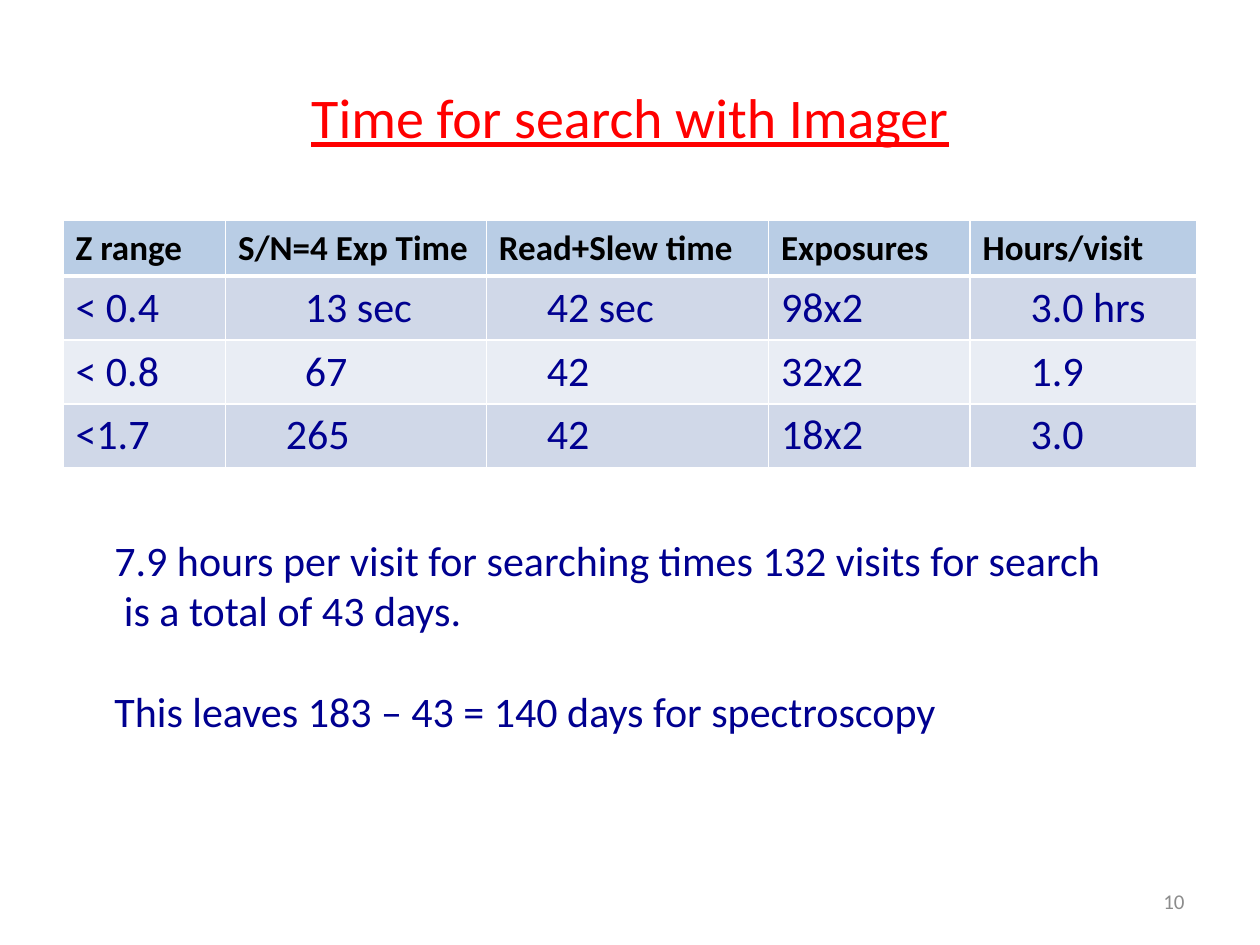
from lxml import etree
from pptx import Presentation
from pptx import util as u
from pptx.dml.color import RGBColor
from pptx.enum import text
from pptx.oxml.ns import qn

RED, NAVY, BLACK, GREY, WHITE = "FF0000", "000090", "000000", "8C8C8C", "FFFFFF"
HEADER_FILL, BAND_FILLS = "B9CDE5", ("D0D8E8", "E9EDF4")

COLUMN_WIDTHS = (1.29, 2.07, 2.24, 1.6, 1.8)
HEADER_HEIGHT, ROW_HEIGHT = 0.43, 0.5
CELL_MARGIN = 0.1
INDENTS = (0, 0.53, 0.38, 0, 0.38)
HEADINGS = ("Z range", "S/N=4 Exp Time", "Read+Slew time", "Exposures", "Hours/visit")
ROWS = (
    ("< 0.4", "13 sec", "42 sec", "98x2", "3.0 hrs"),
    ("< 0.8", "67", "42", "32x2", "1.9"),
    ("<1.7", "265", "42", "18x2", "3.0"),
)
THREE_DIGIT_INDENT = 0.38


def rgb(color):
    return RGBColor.from_string(color)


def write(p, content, size=24, color=NAVY, bold=False, underline=False,
          align=text.PP_ALIGN.LEFT, before=0):
    p.alignment = align
    p.space_before = u.Pt(before)
    r = p.add_run()
    r.text = content
    r.font.name = "Calibri"
    r.font.size = u.Pt(size)
    r.font.bold = bold
    r.font.underline = underline
    r.font.color.rgb = rgb(color)


def set_borders(cell, top=1, bottom=1):
    tcPr = cell._tc.get_or_add_tcPr()
    for tag, width in (("lnL", 1), ("lnR", 1), ("lnT", top), ("lnB", bottom)):
        ln = etree.SubElement(tcPr, qn(f"a:{tag}"), w=str(u.Pt(width)))
        fill = etree.SubElement(ln, qn("a:solidFill"))
        etree.SubElement(fill, qn("a:srgbClr"), val=WHITE)


def format_cell(cell, content, fill, indent=0, top=1, bottom=1, **style):
    set_borders(cell, top, bottom)
    cell.fill.solid()
    cell.fill.fore_color.rgb = rgb(fill)
    cell.margin_left = u.Inches(CELL_MARGIN + indent)
    write(cell.text_frame.paragraphs[0], content, **style)


def place_title(s, left, top, width, height):
    sp = s.shapes.title
    sp.left, sp.top = u.Inches(left), u.Inches(top)
    sp.width, sp.height = u.Inches(width), u.Inches(height)
    tf = sp.text_frame
    tf.vertical_anchor = text.MSO_ANCHOR.MIDDLE
    write(tf.paragraphs[0], "Time for search with Imager", size=32, color=RED,
          underline=True, align=text.PP_ALIGN.CENTER)


def place_times_table(s, left, top, width, height):
    table = s.shapes.add_table(
        len(ROWS) + 1, len(HEADINGS),
        u.Inches(left), u.Inches(top), u.Inches(width), u.Inches(height)).table
    for column, column_width in zip(table.columns, COLUMN_WIDTHS):
        column.width = u.Inches(column_width)
    for i, row in enumerate(table.rows):
        row.height = u.Inches(ROW_HEIGHT if i else HEADER_HEIGHT)
    for c, heading in enumerate(HEADINGS):
        format_cell(table.cell(0, c), heading, HEADER_FILL, bottom=3,
                    size=20, color=BLACK, bold=True)
    for i, values in enumerate(ROWS):
        for c, (value, indent) in enumerate(zip(values, INDENTS)):
            if value.isdigit() and len(value) == 3:
                indent = THREE_DIGIT_INDENT
            format_cell(table.cell(i + 1, c), value, BAND_FILLS[i % 2], indent,
                        top=1 if i else 3)


def add_text_frame(s, left, top, width, height):
    sp = s.shapes.add_textbox(u.Inches(left), u.Inches(top),
                              u.Inches(width), u.Inches(height))
    tf = sp.text_frame
    tf.word_wrap = True
    return tf


def place_summary(s, left, top, width, height):
    tf = add_text_frame(s, left, top, width, height)
    write(tf.paragraphs[0], "7.9 hours per visit for searching times 132 visits for search")
    write(tf.add_paragraph(), " is a total of 43 days.")
    write(tf.add_paragraph(), "This leaves 183 – 43 = 140 days for spectroscopy", before=29)


def place_slide_number(s, left, top, width, height):
    tf = add_text_frame(s, left, top, width, height)
    tf.vertical_anchor = text.MSO_ANCHOR.MIDDLE
    write(tf.paragraphs[0], "10", size=12, color=GREY, align=text.PP_ALIGN.RIGHT)


def main():
    prs = Presentation()
    prs.slide_width, prs.slide_height = u.Inches(10), u.Inches(7.5)
    s = prs.slides.add_slide(prs.slide_layouts.get_by_name("Title Only"))
    place_title(s, 0.5, 0.3, 9, 1.25)
    place_times_table(s, 0.5, 1.75, 9, HEADER_HEIGHT + len(ROWS) * ROW_HEIGHT)
    place_slide_number(s, 7.17, 6.95, 2.33, 0.4)
    place_summary(s, 0.81, 4.19, 8.13, 1.72)
    prs.save("out.pptx")


if __name__ == "__main__":
    main()
